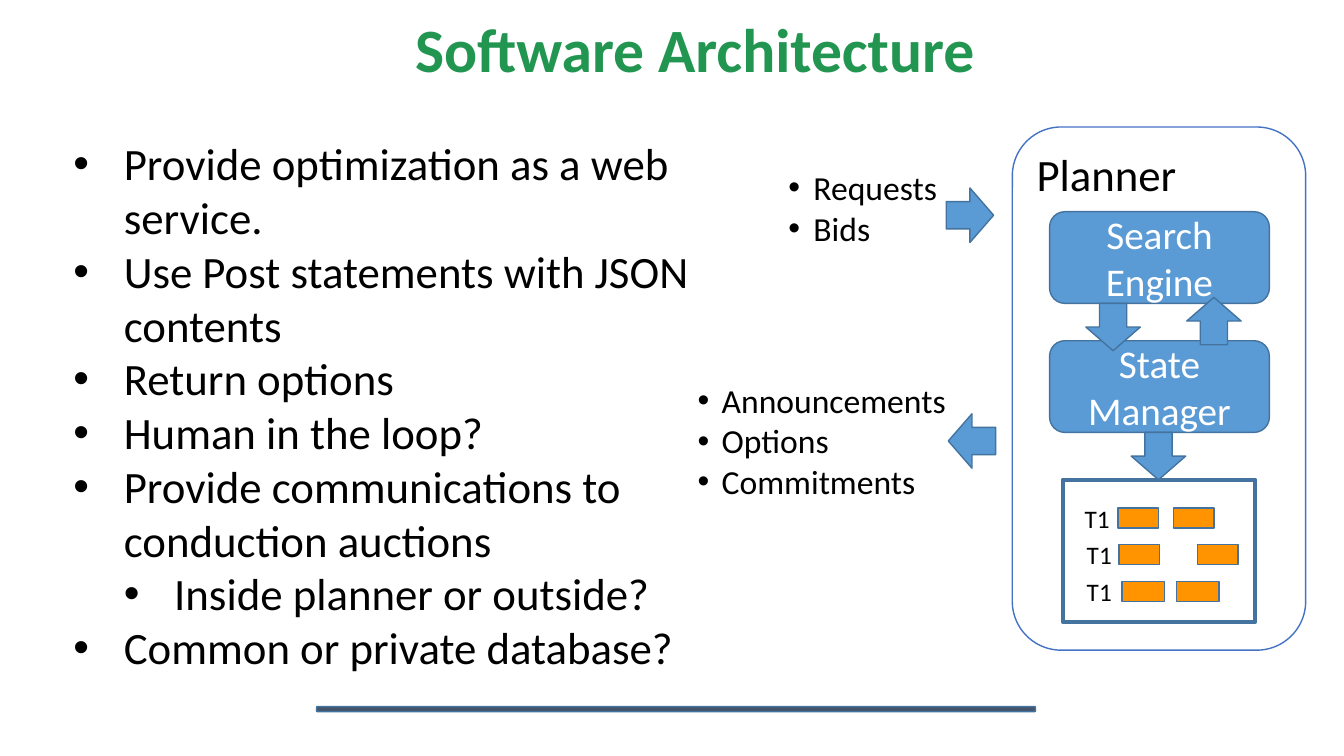
import pptx
import pptx.util
import pptx.dml.color
import pptx.enum.shapes
import pptx.enum.text
import pptx.oxml.ns
import lxml.etree

Inches = pptx.util.Inches
Pt = pptx.util.Pt
RGBColor = pptx.dml.color.RGBColor
Shape = pptx.enum.shapes.MSO_SHAPE
Align = pptx.enum.text.PP_ALIGN
Anchor = pptx.enum.text.MSO_ANCHOR

GREEN = RGBColor(0x22, 0x96, 0x51)
BLACK = RGBColor(0, 0, 0)
WHITE = RGBColor(255, 255, 255)
BLUE = RGBColor(0x5B, 0x9B, 0xD5)
EDGE = RGBColor(0x43, 0x73, 0x9E)
FRAME = RGBColor(0x44, 0x72, 0xC4)
SLATE = RGBColor(0x44, 0x54, 0x6A)
ORANGE = RGBColor(0xFF, 0x93, 0x00)

TITLE = "Software Architecture"
POINTS = [
    (0, "Provide optimization as a web service."),
    (0, "Use Post statements with JSON contents"),
    (0, "Return options"),
    (0, "Human in the loop?"),
    (0, "Provide communications to conduction auctions"),
    (1, "Inside planner or outside?"),
    (0, "Common or private database?"),
]
INPUTS = [(0, "Requests"), (0, "Bids")]
OUTPUTS = [(0, "Announcements"), (0, "Options"), (0, "Commitments")]
MODULES = [("Search Engine", 2.1), ("State Manager", 3.38)]
ARROWS = [
    (11.22, 4.29, 0),
    (10.77, 3.01, 0),
    (11.77, 2.95, 180),
    (9.35, 1.9, 270),
    (9.37, 4.14, 90),
]
TIMELINES = [
    ("T1", 10.66, 4.94, 0.4, (11.09, 11.64)),
    ("T1", 10.68, 5.3, 0.4, (11.1, 11.88)),
    ("T1", 10.68, 5.67, 0.42, (11.13, 11.67)),
]

deck = pptx.Presentation()
deck.slide_width, deck.slide_height = Inches(13.33), Inches(7.5)
page = deck.slides.add_slide(deck.slide_layouts[6])


def style(para, size, color, align=Align.LEFT, bold=False):
    para.alignment = align
    para.font.name = "Calibri"
    para.font.size = Pt(size)
    para.font.color.rgb = color
    para.font.bold = bold


def add_block(kind, left, top, width, height, fill=BLUE, line=EDGE, weight=1):
    block = page.shapes.add_shape(
        kind, Inches(left), Inches(top), Inches(width), Inches(height))
    block.shadow.inherit = False
    if fill is None:
        block.fill.background()
    else:
        block.fill.solid()
        block.fill.fore_color.rgb = fill
    block.line.color.rgb = line
    block.line.width = Pt(weight)
    return block


def add_text(text, left, top, width, height, wrap=True):
    box = page.shapes.add_textbox(
        Inches(left), Inches(top), Inches(width), Inches(height))
    box.text_frame.word_wrap = wrap
    box.text_frame.text = text
    return box.text_frame


def add_bullets(items, left, top, width, height, size, indent, hang):
    frame = add_text("\n".join(text for level, text in items),
                     left, top, width, height)
    for para, (level, text) in zip(frame.paragraphs, items):
        para.level = level
        props = para._p.get_or_add_pPr()
        props.set("marL", str(Inches(indent * (level + 1))))
        props.set("indent", str(-Inches(hang)))
        for tag, name, value in (("a:buFont", "typeface", "Arial"),
                                 ("a:buChar", "char", "•")):
            lxml.etree.SubElement(
                props, pptx.oxml.ns.qn(tag)).set(name, value)
        style(para, size, BLACK)


add_block(Shape.ROUNDED_RECTANGLE, 3.14, 7.01, 7.13, 0.05, SLATE)

heading = add_text(TITLE, 0.96, 0.14, 11.87, 1.12).paragraphs[0]
heading.line_spacing = 0.9
style(heading, 44, GREEN, Align.CENTER, True)

add_bullets(POINTS, 0.63, 1.3, 6.47, 5.49, 32, 0.5, 0.5)

planner = add_block(
    Shape.ROUNDED_RECTANGLE, 10.04, 1.26, 2.91, 5.19, None, FRAME)
planner.text_frame.text = "Planner"
planner.text_frame.vertical_anchor = Anchor.TOP
style(planner.text_frame.paragraphs[0], 32, BLACK)

for name, top in MODULES:
    module = add_block(Shape.ROUNDED_RECTANGLE, 10.41, top, 2.18, 0.91)
    module.text_frame.text = name
    module.text_frame.word_wrap = True
    module.text_frame.vertical_anchor = Anchor.MIDDLE
    style(module.text_frame.paragraphs[0], 28, WHITE, Align.CENTER)

add_block(Shape.RECTANGLE, 10.54, 4.76, 1.91, 1.41, None, EDGE, 3)
for label, left, top, task_width, tasks in TIMELINES:
    frame = add_text(label, left, top, 0.45, 0.4, False)
    style(frame.paragraphs[0], 18, BLACK)
    for task_left in tasks:
        add_block(Shape.RECTANGLE, task_left, top + 0.1,
                  task_width, 0.2, ORANGE)

for left, top, turn in ARROWS:
    add_block(Shape.DOWN_ARROW, left, top, 0.54, 0.47).rotation = turn

add_bullets(INPUTS, 7.47, 1.61, 2.03, 0.91, 24, 0.5, 0.25)
add_bullets(OUTPUTS, 6.68, 3.72, 2.82, 1.31, 24, 0.38, 0.24)

deck.save("out.pptx")
